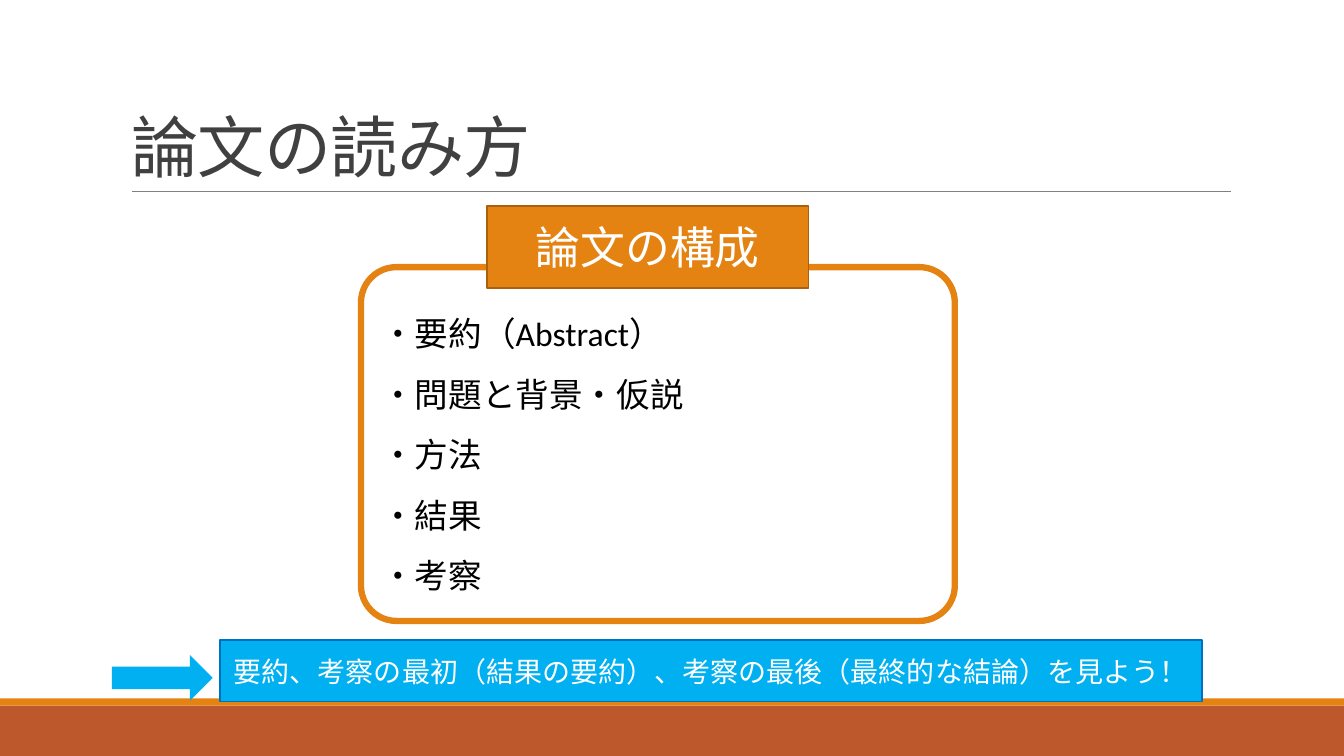
from pptx import Presentation
from pptx.dml.color import RGBColor
from pptx.enum.shapes import MSO_CONNECTOR, MSO_SHAPE
from pptx.enum.text import MSO_ANCHOR, MSO_AUTO_SIZE, PP_ALIGN
from pptx.oxml.ns import qn
from pptx.util import Inches, Pt
from lxml.etree import SubElement

WHITE = RGBColor(0xFF, 0xFF, 0xFF)
BLACK = RGBColor(0x00, 0x00, 0x00)
DARK_GRAY = RGBColor(0x40, 0x40, 0x40)
GRAY = RGBColor(0x80, 0x80, 0x80)
ORANGE = RGBColor(0xE4, 0x83, 0x12)
BROWN = RGBColor(0xA9, 0x61, 0x0D)
RUST = RGBColor(0xBD, 0x58, 0x2C)
SKY = RGBColor(0x00, 0xB0, 0xF0)
BLUE = RGBColor(0x00, 0x70, 0xC0)

SECTIONS = ["・要約（Abstract）", "・問題と背景・仮説", "・方法", "・結果", "・考察"]


class SlideBuilder:
    font = "Calibri"

    def __init__(self, slide):
        self.slide = slide

    def add_lines(self, shape, lines, size, color, align=PP_ALIGN.CENTER,
                  anchor=MSO_ANCHOR.MIDDLE, spacing=None):
        """Fill a shape with one paragraph per line."""
        frame = shape.text_frame
        frame.word_wrap = True
        frame.auto_size = MSO_AUTO_SIZE.NONE
        frame.vertical_anchor = anchor
        for index, line in enumerate(lines):
            para = frame.add_paragraph() if index else frame.paragraphs[0]
            para.alignment = align
            para.line_spacing = spacing
            span = para.add_run()
            span.text = line
            span.font.name = self.font
            span.font.size = Pt(size)
            span.font.color.rgb = color

    def title(self, text, left, top, width, height):
        title = self.slide.shapes.title
        title.left, title.top = Inches(left), Inches(top)
        title.width, title.height = Inches(width), Inches(height)
        self.add_lines(title, [text], 48, DARK_GRAY, PP_ALIGN.LEFT,
                       MSO_ANCHOR.BOTTOM, 0.85)
        span = title.text_frame.paragraphs[0].runs[0]
        span.font._element.set("spc", "-50")

    def box(self, kind, left, top, width, height, fill, line=None, weight=1.25):
        box = self.slide.shapes.add_shape(
            kind, Inches(left), Inches(top), Inches(width), Inches(height))
        box.shadow.inherit = False
        box.fill.solid()
        box.fill.fore_color.rgb = fill
        if line is None:
            box.line.fill.background()
        else:
            box.line.color.rgb = line
            box.line.width = Pt(weight)
        return box

    def rule(self, left, right, top):
        rule = self.slide.shapes.add_connector(
            MSO_CONNECTOR.STRAIGHT, Inches(left), Inches(top), Inches(right), Inches(top))
        rule.line.color.rgb = GRAY
        rule.line.width = Pt(0.5)
        SubElement(rule._element.spPr, qn("a:effectLst"))


def main():
    deck = Presentation()
    deck.slide_width, deck.slide_height = Inches(13.33), Inches(7.5)
    builder = SlideBuilder(deck.slides.add_slide(deck.slide_layouts[5]))

    builder.box(MSO_SHAPE.RECTANGLE, 0, 7, 13.33, 0.5, RUST)
    builder.box(MSO_SHAPE.RECTANGLE, 0, 6.93, 13.33, 0.07, ORANGE)
    builder.rule(1.31, 12.21, 1.9)
    builder.title("論文の読み方", 1.2, 0.31, 11, 1.59)

    outline = builder.box(MSO_SHAPE.ROUNDED_RECTANGLE, 3.58, 2.65, 5.89, 3.51,
                          WHITE, ORANGE, 4.5)
    outline.adjustments[0] = 0.1
    builder.add_lines(outline, SECTIONS, 24, BLACK, PP_ALIGN.LEFT, spacing=1.5)

    heading = builder.box(MSO_SHAPE.RECTANGLE, 4.83, 2.04, 3.19, 0.82, ORANGE, BROWN)
    builder.add_lines(heading, ["論文の構成"], 32, WHITE)

    advice = builder.box(MSO_SHAPE.RECTANGLE, 2.18, 6.35, 9.74, 0.61, SKY, BLUE)
    builder.add_lines(advice, ["要約、考察の最初（結果の要約）、考察の最後（最終的な結論）を見よう！"],
                      20, WHITE)
    builder.box(MSO_SHAPE.RIGHT_ARROW, 1.11, 6.5, 1, 0.45, SKY)

    deck.save("out.pptx")


if __name__ == "__main__":
    main()
